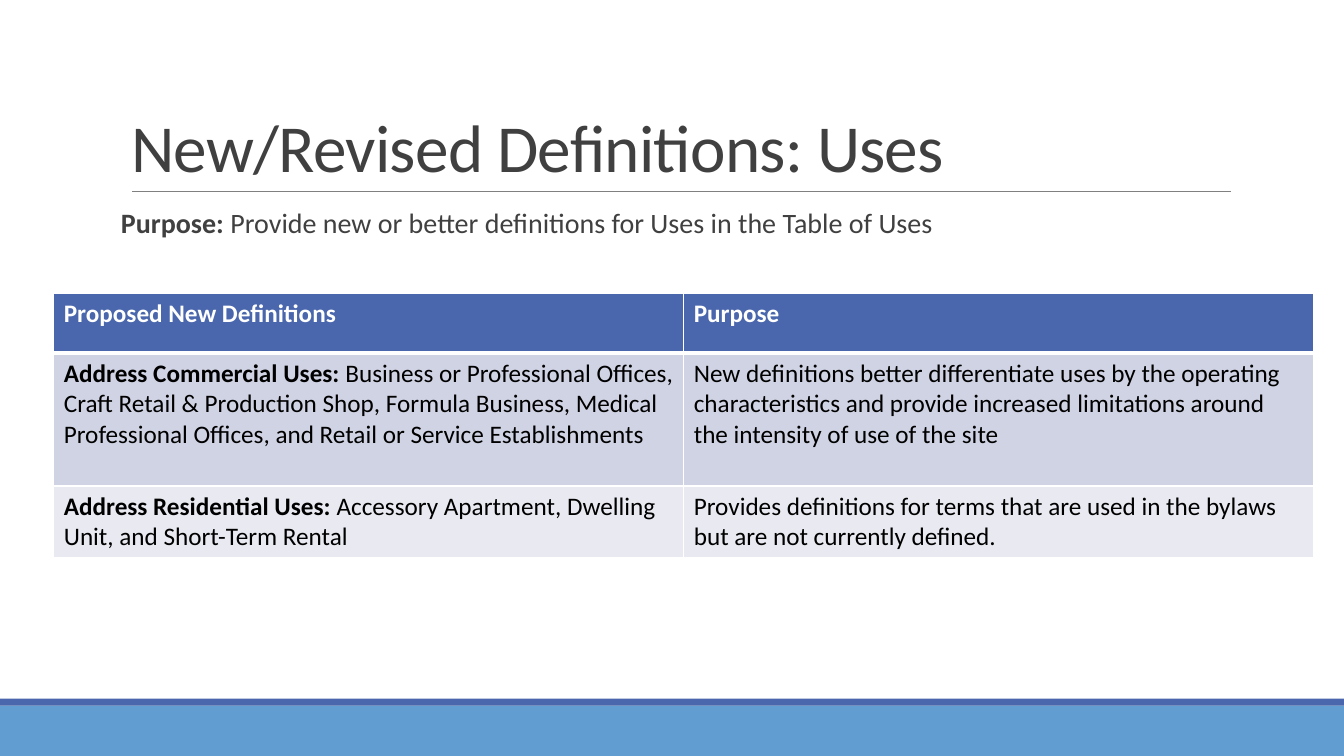
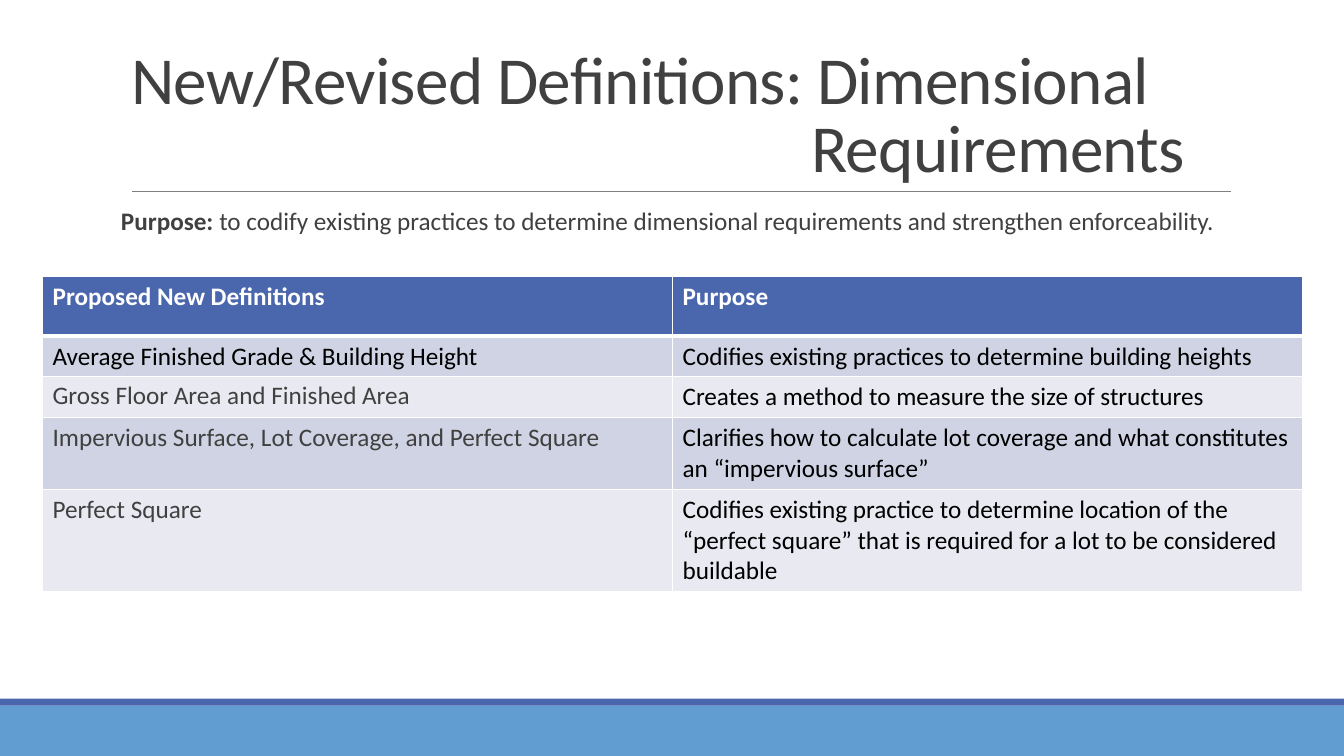
from dataclasses import dataclass

from lxml.etree import SubElement
from pptx import Presentation
from pptx.dml.color import RGBColor
from pptx.enum.shapes import MSO_CONNECTOR, MSO_SHAPE
from pptx.enum.text import MSO_ANCHOR, MSO_AUTO_SIZE, PP_ALIGN
from pptx.oxml.ns import qn
from pptx.util import Pt


@dataclass(frozen=True)
class Theme:
    font: str = "Calibri"
    title_size: float = 48
    purpose_size: float = 20
    body_size: float = 18
    white: str = "FFFFFF"
    black: str = "000000"
    gray: str = "404040"
    rule: str = "808080"
    blue: str = "4A66AC"
    light_blue: str = "629DD1"
    row_fills: tuple = ("D0D3E3", "E9EAF1")


@dataclass(frozen=True)
class Span:
    text: str
    bold: bool = False
    color: str = Theme.black


WIDTH, HEIGHT = 960, 540
TEXT_LEFT, TEXT_WIDTH = 86.4, 792
RULE_LEFT, RULE_RIGHT, RULE_TOP = 94.4, 879, 136.8
BAND_TOP, STRIPE_HEIGHT = 504, 5
COLUMN_WIDTH = 450
HEADINGS = ("Proposed New Definitions", "Purpose")


class SlideBuilder:
    def __init__(self, deck, theme):
        self.deck = deck
        self.theme = theme
        self.slide = None

    # Shared parts: bands at the foot and the rule below the title
    def new_slide(self):
        self.slide = self.deck.slides.add_slide(self.deck.slide_layouts[5])
        self.band(BAND_TOP, HEIGHT - BAND_TOP, self.theme.light_blue)
        self.band(BAND_TOP - STRIPE_HEIGHT, STRIPE_HEIGHT, self.theme.blue)
        self.rule()

    def band(self, top, height, color):
        band = self.slide.shapes.add_shape(
            MSO_SHAPE.RECTANGLE, Pt(0), Pt(top), Pt(WIDTH), Pt(height))
        band.shadow.inherit = False
        band.fill.solid()
        band.fill.fore_color.rgb = RGBColor.from_string(color)
        band.line.fill.background()

    def rule(self):
        rule = self.slide.shapes.add_connector(
            MSO_CONNECTOR.STRAIGHT, Pt(RULE_LEFT), Pt(RULE_TOP),
            Pt(RULE_RIGHT), Pt(RULE_TOP))
        rule.line.color.rgb = RGBColor.from_string(self.theme.rule)
        rule.line.width = Pt(0.5)
        SubElement(rule._element.spPr, qn("a:effectLst"))

    # Text
    def add_spans(self, para, spans, size):
        for span in spans:
            run = para.add_run()
            run.text = span.text
            run.font.name = self.theme.font
            run.font.size = Pt(size)
            run.font.bold = span.bold
            run.font.color.rgb = RGBColor.from_string(span.color)

    def title(self, text, hanging=0):
        title = self.slide.shapes.title
        title.left, title.top = Pt(TEXT_LEFT), Pt(22.4)
        title.width, title.height = Pt(TEXT_WIDTH), Pt(RULE_TOP - 22.4)
        frame = title.text_frame
        frame.auto_size = MSO_AUTO_SIZE.NONE
        frame.word_wrap = True
        frame.vertical_anchor = MSO_ANCHOR.BOTTOM
        para = frame.paragraphs[0]
        para.alignment = PP_ALIGN.LEFT
        para.line_spacing = 0.85
        self.add_spans(para, [Span(text, color=self.theme.gray)], self.theme.title_size)
        para.runs[0].font._element.set("spc", "-50")
        # Hanging indent: later lines start further right
        properties = para._p.get_or_add_pPr()
        properties.set("marL", str(Pt(hanging)))
        properties.set("indent", str(-Pt(hanging)))

    def purpose(self, text, size, alignment=PP_ALIGN.LEFT):
        box = self.slide.shapes.add_textbox(
            Pt(TEXT_LEFT), Pt(145.8), Pt(TEXT_WIDTH), Pt(66))
        frame = box.text_frame
        frame.word_wrap = True
        frame.margin_left = frame.margin_right = Pt(0)
        para = frame.paragraphs[0]
        para.alignment = alignment
        para.line_spacing = 0.9
        gray = self.theme.gray
        self.add_spans(para, [Span("Purpose: ", True, gray), Span(text, False, gray)], size)

    # Table
    def table(self, left, top, heights, rows):
        headings = [[Span(text, True, self.theme.white)] for text in HEADINGS]
        rows = [headings, *rows]
        table = self.slide.shapes.add_table(
            len(rows), len(HEADINGS), Pt(left), Pt(top),
            Pt(COLUMN_WIDTH * len(HEADINGS)), Pt(sum(heights))).table
        table.horz_banding = False
        for column in table.columns:
            column.width = Pt(COLUMN_WIDTH)
        for index, (height, cells) in enumerate(zip(heights, rows)):
            table.rows[index].height = Pt(height)
            fill = self.theme.row_fills[(index - 1) % 2] if index else self.theme.blue
            for column, spans in enumerate(cells):
                cell = table.cell(index, column)
                self.borders(cell, top=3 if index == 1 else 1,
                             bottom=3 if index == 0 else 1)
                cell.fill.solid()
                cell.fill.fore_color.rgb = RGBColor.from_string(fill)
                self.add_spans(cell.text_frame.paragraphs[0], spans, self.theme.body_size)
        return table

    def borders(self, cell, top, bottom):
        properties = cell._tc.get_or_add_tcPr()
        for side, width in (("L", 1), ("R", 1), ("T", top), ("B", bottom)):
            line = SubElement(properties, qn(f"a:ln{side}"), w=str(Pt(width)))
            fill = SubElement(line, qn("a:solidFill"))
            SubElement(fill, qn("a:srgbClr"), val=self.theme.white)


def uses_slide(builder):
    builder.new_slide()
    builder.title("New/Revised Definitions: Uses")
    builder.purpose("Provide new or better definitions for Uses in the Table of Uses",
                    builder.theme.purpose_size)
    builder.table(38.4, 209.8, (42.4, 95, 51), [
        [[Span("Address Commercial Uses: ", True),
          Span("Business or Professional Offices, Craft Retail & Production Shop, "
               "Formula Business, Medical Professional Offices, and Retail or "
               "Service Establishments")],
         [Span("New definitions better differentiate uses by the operating "
               "characteristics and provide increased limitations around the "
               "intensity of use of the site")]],
        [[Span("Address Residential Uses: ", True),
          Span("Accessory Apartment, Dwelling Unit, and Short-Term Rental")],
         [Span("Provides definitions for terms that are used in the bylaws but "
               "are not currently defined.")]],
    ])


def dimensions_slide(builder):
    gray = builder.theme.gray
    builder.new_slide()
    builder.title("New/Revised Definitions: Dimensional Requirements", hanging=486)
    builder.purpose("to codify existing practices to determine dimensional "
                    "requirements and strengthen enforceability.",
                    builder.theme.body_size, PP_ALIGN.JUSTIFY)
    table = builder.table(30.4, 197.6, (42.4, 29.2, 29.2, 51.2, 73.2), [
        [[Span("Average Finished Grade & Building Height")],
         [Span("Codifies existing practices to determine building heights")]],
        [[Span("Gross Floor Area and Finished Area", color=gray)],
         [Span("Creates a method to measure the size of structures")]],
        [[Span("Impervious Surface, Lot Coverage, and Perfect Square", color=gray)],
         [Span("Clarifies how to calculate lot coverage and what constitutes an "
               "“impervious surface”")]],
        [[Span("Perfect Square", color=gray)],
         [Span("Codifies existing practice to determine location of the “perfect "
               "square” that is required for a lot to be considered buildable")]],
    ])
    table.cell(2, 0).text_frame.paragraphs[0].line_spacing = 0.9


def main():
    deck = Presentation()
    deck.slide_width, deck.slide_height = Pt(WIDTH), Pt(HEIGHT)
    builder = SlideBuilder(deck, Theme())
    uses_slide(builder)
    dimensions_slide(builder)
    deck.save("out.pptx")


if __name__ == "__main__":
    main()
